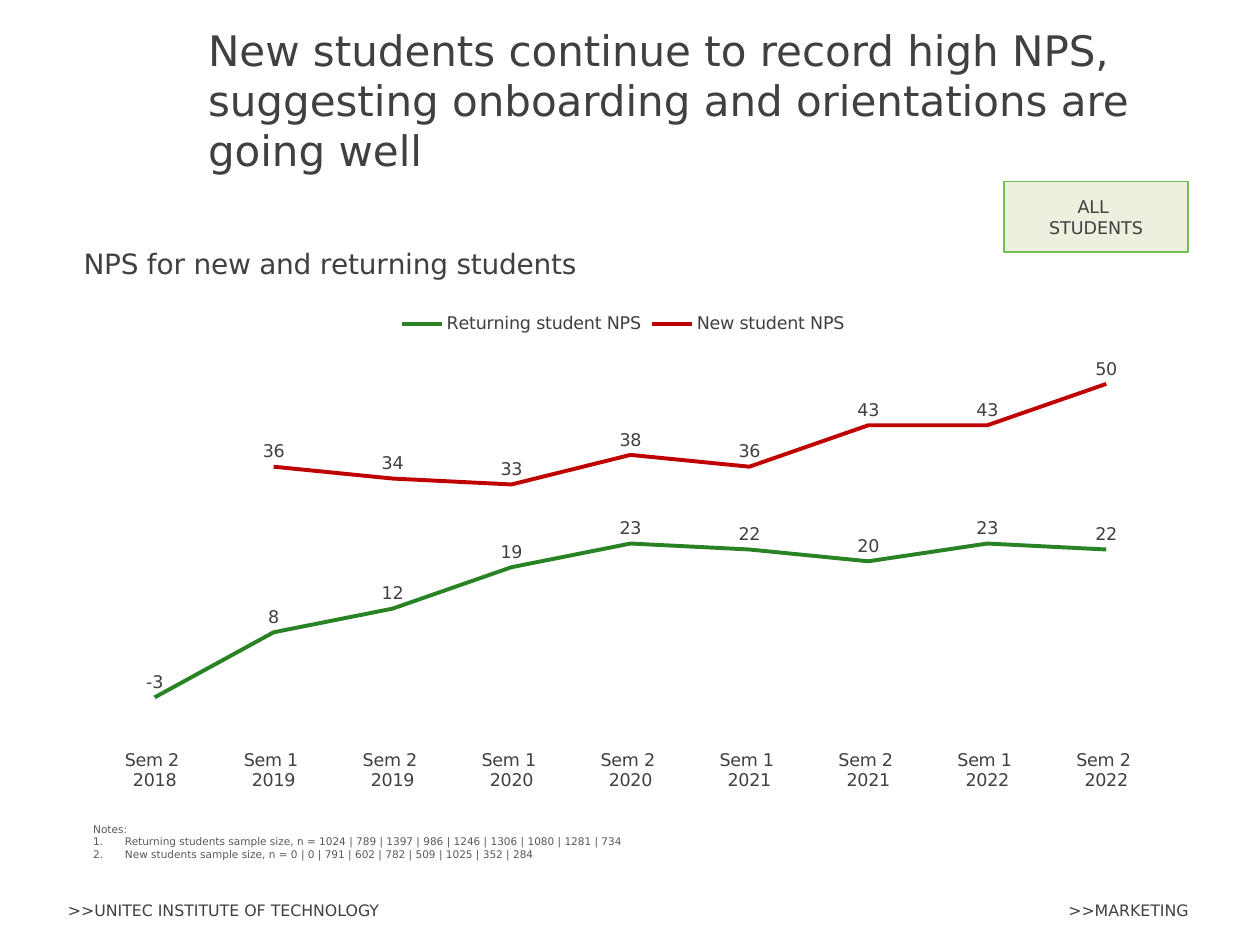
from dataclasses import dataclass

from lxml import etree
from pptx import Presentation
from pptx import util as u
from pptx.chart import data as chart_data
from pptx.dml import color
from pptx.enum import chart as charts, shapes, text
from pptx.oxml import ns


@dataclass(frozen=True)
class Theme:
    face: str = "DejaVu Sans"
    ink: str = "404040"
    note: str = "595959"
    returning: str = "298224"
    new: str = "C00000"
    tag_fill: str = "EBF1DE"
    tag_line: str = "77BD51"
    title_size: int = 24
    chart_title_size: int = 16
    body_size: int = 10
    footer_size: int = 9
    note_size: int = 6


theme = Theme()


def style(font, size, ink=theme.ink):
    font.name = theme.face
    font.size = u.Pt(size)
    font.bold = False
    font.color.rgb = color.RGBColor.from_string(ink)


def place(element, index, **fractions):
    """Set a manual layout, in fractions of the chart area."""
    layout = element.find(ns.qn("c:layout"))
    if layout is None:
        layout = etree.Element(ns.qn("c:layout"))
        element.insert(index, layout)
    manual = etree.SubElement(layout, ns.qn("c:manualLayout"))
    if "w" in fractions:
        etree.SubElement(manual, ns.qn("c:layoutTarget"), val="inner")
    for mode in ("xMode", "yMode"):
        etree.SubElement(manual, ns.qn(f"c:{mode}"), val="edge")
    for name, value in fractions.items():
        etree.SubElement(manual, ns.qn(f"c:{name}"), val=str(value))


deck = Presentation()
deck.slide_width, deck.slide_height = u.Cm(25.4), u.Cm(19.05)
page = deck.slides.add_slide(deck.slide_layouts[5])

# Title
title = page.shapes.title
title.left, title.top = u.Cm(3.94), u.Cm(1.3)
title.width, title.height = u.Cm(19.99), u.Cm(1.42)
frame = title.text_frame
frame.word_wrap = True
frame.auto_size = text.MSO_AUTO_SIZE.NONE
frame.vertical_anchor = text.MSO_ANCHOR.MIDDLE
para = frame.paragraphs[0]
para.alignment = text.PP_ALIGN.LEFT
span = para.add_run()
span.text = ("New students continue to record high NPS, suggesting "
             "onboarding and orientations are going well")
style(span.font, theme.title_size)

# Line chart
source = chart_data.CategoryChartData(number_format="0")
semesters = [(2, 2018)] + [(half, year) for year in range(2019, 2023)
                           for half in (1, 2)]
source.categories = [f"Sem {half} \n{year}" for half, year in semesters]
source.add_series("Returning student NPS", [-3, 8, 12, 19, 23, 22, 20, 23, 22])
source.add_series("New student NPS", [None, 36, 34, 33, 38, 36, 43, 43, 50])
chart = page.shapes.add_chart(
    charts.XL_CHART_TYPE.LINE, u.Cm(1.47), u.Cm(4.75), u.Cm(22.48), u.Cm(11.4),
    source).chart
style(chart.font, theme.body_size)

chart.has_title = True
span = chart.chart_title.text_frame.paragraphs[0].add_run()
span.text = "NPS for new and returning students"
style(span.font, theme.chart_title_size)
place(chart.chart_title._element, 1, x=0.005, y=0.01)

chart.has_legend = True
chart.legend.position = charts.XL_LEGEND_POSITION.TOP
chart.legend.include_in_layout = False
style(chart.legend.font, theme.body_size)
place(chart.legend._element, 1, x=0.29, y=0.13)
place(chart._chartSpace.chart.plotArea, 0, x=0.02, y=0.21, w=0.96, h=0.68)

# Axes
for axis, labels in ((chart.category_axis, charts.XL_TICK_LABEL_POSITION.LOW),
                     (chart.value_axis, charts.XL_TICK_LABEL_POSITION.NONE)):
    axis.has_major_gridlines = False
    axis.major_tick_mark = axis.minor_tick_mark = charts.XL_TICK_MARK.NONE
    axis.tick_label_position = labels
    axis.format.line.fill.background()
    style(axis.tick_labels.font, theme.body_size)
chart.value_axis.minimum_scale = -10
chart.value_axis.maximum_scale = 55

# Series and value labels
for series, ink in zip(chart.plots[0].series, (theme.returning, theme.new)):
    series.smooth = False
    series.marker.style = charts.XL_MARKER_STYLE.NONE
    series.format.line.width = u.Pt(2.25)
    series.format.line.color.rgb = color.RGBColor.from_string(ink)
    labels = series.data_labels
    labels.show_value = True
    labels.position = charts.XL_LABEL_POSITION.ABOVE
    labels.number_format, labels.number_format_is_linked = "0", False
    style(labels.font, theme.body_size)

# Footers
for words, left, width, align in (
        (">>UNITEC INSTITUTE OF TECHNOLOGY", 1.12, 10.34, text.PP_ALIGN.LEFT),
        (">>MARKETING", 13.67, 10.54, text.PP_ALIGN.RIGHT)):
    box = page.shapes.add_textbox(u.Cm(left), u.Cm(18.03), u.Cm(width), u.Cm(0.64))
    box.text_frame.word_wrap = True
    box.text_frame.vertical_anchor = text.MSO_ANCHOR.MIDDLE
    para = box.text_frame.paragraphs[0]
    para.alignment = align
    span = para.add_run()
    span.text = words
    style(span.font, theme.footer_size)

# Notes
notes = (
    "Notes:",
    "Returning students sample size, n = "
    "1024 | 789 | 1397 | 986 | 1246 | 1306 | 1080 | 1281 | 734",
    "New students sample size, n = 0 | 0 | 791 | 602 | 782 | 509 | 1025 | 352 | 284",
)
box = page.shapes.add_textbox(u.Cm(1.63), u.Cm(16.46), u.Cm(15.44), u.Cm(0.69))
frame = box.text_frame
frame.word_wrap = True
for number, words in enumerate(notes):
    para = frame.add_paragraph() if number else frame.paragraphs[0]
    if number:
        props = para._p.get_or_add_pPr()
        indent = u.Cm(0.64)
        props.set("marL", str(indent))
        props.set("indent", str(-indent))
        etree.SubElement(props, ns.qn("a:buAutoNum"), type="arabicPeriod")
    span = para.add_run()
    span.text = words
    style(span.font, theme.note_size, theme.note)

# Audience tag
tag = page.shapes.add_shape(shapes.MSO_SHAPE.RECTANGLE, u.Cm(20.24), u.Cm(3.66),
                            u.Cm(3.71), u.Cm(1.42))
tag.shadow.inherit = False
tag.fill.solid()
tag.fill.fore_color.rgb = color.RGBColor.from_string(theme.tag_fill)
tag.line.color.rgb = color.RGBColor.from_string(theme.tag_line)
tag.line.width = u.Pt(0.75)
tag.text_frame.vertical_anchor = text.MSO_ANCHOR.MIDDLE
para = tag.text_frame.paragraphs[0]
para.alignment = text.PP_ALIGN.CENTER
for number, words in enumerate(("ALL ", "STUDENTS")):
    if number:
        para.add_line_break()
    span = para.add_run()
    span.text = words
    style(span.font, theme.body_size)

deck.save("out.pptx")
